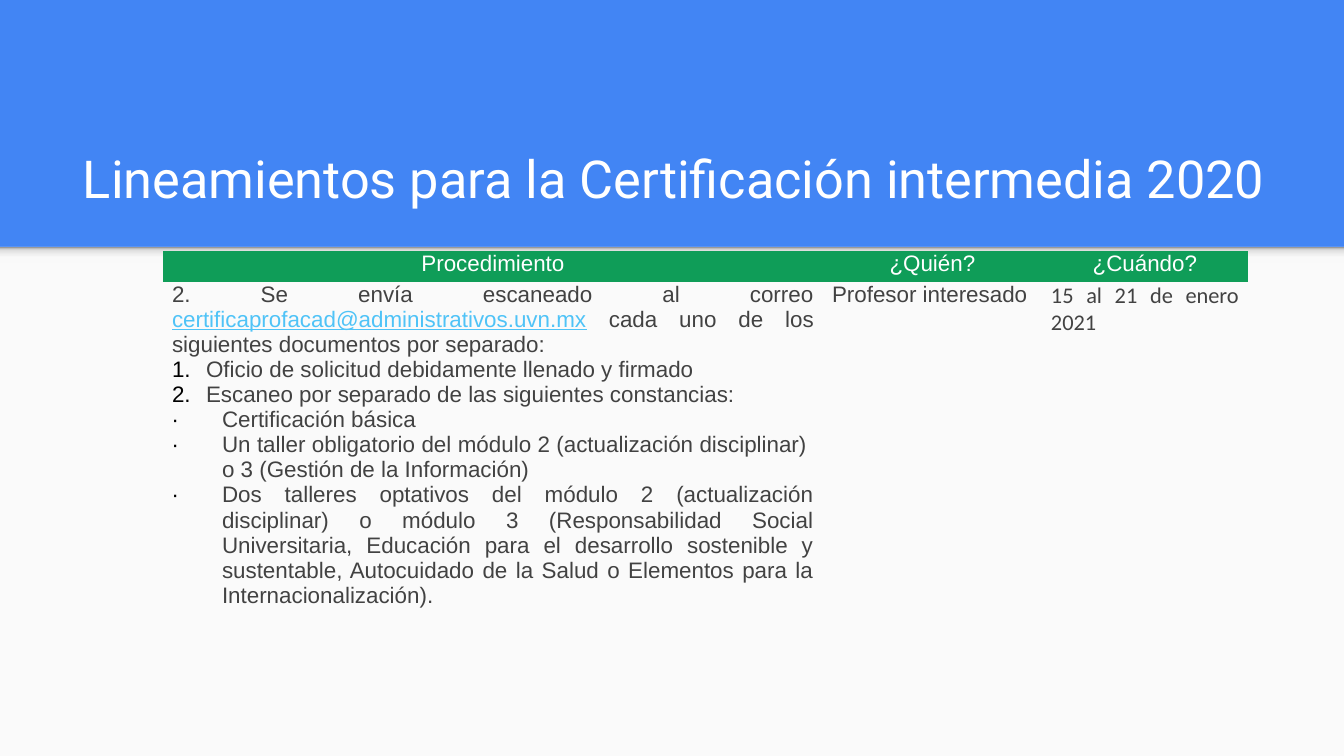
from copy import deepcopy

from lxml import etree
from pptx import Presentation
from pptx import util as u
from pptx.dml.color import RGBColor
from pptx.enum import shapes, text
from pptx.oxml import ns

EMU_PER_PX = 914400 / 134.4
NO_TABLE_STYLE = "{2D5ABB26-0587-4C30-8999-92F81FD0307C}"
COLORS = {
    "banner": "4285F4",
    "page": "FAFAFA",
    "header": "0F9D58",
    "white": "FFFFFF",
    "body": "424242",
    "link": "4FC3F7",
    "bullet": "000000",
}
SHADOW_STOPS = [(0, "F9F9F9"), (0.36, "F9F9F9"), (0.8, "DEDEDE"), (1, "999999")]
NUMBER = ("buAutoNum", "type", "arabicPeriod", 34)
DOT = ("buChar", "char", "∙", 50)

HEADERS = ["Procedimiento", "¿Quién?", "¿Cuándo?"]
EMAIL = "certificaprofacad@administrativos.uvn.mx"
STEPS = [
    (NUMBER, "Oficio de solicitud debidamente llenado y firmado"),
    (NUMBER, "Escaneo por separado de las siguientes constancias: "),
    (DOT, "Certificación básica"),
    (DOT, "Un taller obligatorio del módulo 2 (actualización disciplinar)  o 3 "
          "(Gestión de la Información) "),
    (DOT, "Dos talleres optativos del módulo 2 (actualización disciplinar) o módulo 3 "
          "(Responsabilidad Social Universitaria, Educación para el desarrollo sostenible "
          "y sustentable, Autocuidado de la Salud o Elementos para la Internacionalización)."),
]


def px(length):
    return u.Emu(round(length * EMU_PER_PX))


def rgb(name):
    return RGBColor.from_string(COLORS[name])


def add_run(paragraph, words, color="body", font="Arial", size=12, underline=False):
    run = paragraph.add_run()
    run.text = words
    run.font.name = font
    run.font.size = u.Pt(size)
    run.font.color.rgb = rgb(color)
    run.font.underline = underline


def add_bullet(paragraph, bullet):
    tag, attribute, value, indent = bullet
    properties = paragraph._p.get_or_add_pPr()
    properties.set("marL", str(px(indent)))
    properties.set("indent", str(-px(indent)))
    color = etree.SubElement(properties, ns.qn("a:buClr"))
    etree.SubElement(color, ns.qn("a:srgbClr"), val=COLORS["bullet"])
    etree.SubElement(properties, ns.qn("a:buFont"), typeface="Arial")
    etree.SubElement(properties, ns.qn(f"a:{tag}"), {attribute: value})


def add_rectangle(slide, left, top, width, height):
    rectangle = slide.shapes.add_shape(
        shapes.MSO_SHAPE.RECTANGLE, px(left), px(top), px(width), px(height))
    rectangle.shadow.inherit = False
    rectangle.line.fill.background()
    return rectangle


def add_page(slide, left, top, width, height):
    """Light page area with the banner's soft shadow along its top edge."""
    page = add_rectangle(slide, left, top, width, height)
    page.fill.solid()
    page.fill.fore_color.rgb = rgb("page")

    shadow = add_rectangle(slide, left, top, width, 16)
    shadow.fill.gradient()
    shadow.fill.gradient_angle = 90
    stop_list = shadow._element.spPr.find(".//" + ns.qn("a:gsLst"))
    while len(stop_list) < len(SHADOW_STOPS):
        stop_list.append(deepcopy(stop_list[0]))
    for stop, (position, color) in zip(shadow.fill.gradient_stops, SHADOW_STOPS):
        stop.position = position
        stop.color.rgb = RGBColor.from_string(color)


def add_title(slide, left, top, width, height):
    frame = slide.shapes.add_textbox(px(left), px(top), px(width), px(height)).text_frame
    frame.word_wrap = True
    frame.vertical_anchor = text.MSO_ANCHOR.BOTTOM
    frame.margin_left = frame.margin_right = px(13)
    frame.margin_top = frame.margin_bottom = px(13)
    add_run(frame.paragraphs[0], "Lineamientos para la Certificación intermedia 2020",
            "white", "Roboto", 28)


def fill_procedure(frame):
    intro = frame.paragraphs[0]
    add_run(intro, "2. Se envía escaneado al correo ")
    add_run(intro, EMAIL, "link", underline=True)
    add_run(intro, " ", "banner")
    add_run(intro, "cada uno de los siguientes documentos por separado:")
    for bullet, words in STEPS:
        paragraph = frame.add_paragraph()
        add_bullet(paragraph, bullet)
        add_run(paragraph, words)


def add_procedure_table(slide, left, top, column_widths, row_heights):
    graphic = slide.shapes.add_table(
        len(row_heights), len(column_widths), px(left), px(top),
        px(sum(column_widths)), px(sum(row_heights)))
    table = graphic.table
    table.first_row = table.horz_banding = False
    table._tbl.tblPr.find(ns.qn("a:tableStyleId")).text = NO_TABLE_STYLE
    for column, width in zip(table.columns, column_widths):
        column.width = px(width)
    for row, height in zip(table.rows, row_heights):
        row.height = px(height)
    for cell in table.iter_cells():
        cell.margin_left = cell.margin_right = px(9)
        cell.margin_top = cell.margin_bottom = 0
        cell.fill.background()

    for index, words in enumerate(HEADERS):
        cell = table.cell(0, index)
        cell.fill.solid()
        cell.fill.fore_color.rgb = rgb("header")
        paragraph = cell.text_frame.paragraphs[0]
        paragraph.alignment = text.PP_ALIGN.CENTER
        add_run(paragraph, words, "white")

    procedure, who, when = (table.cell(1, index).text_frame for index in range(3))
    fill_procedure(procedure)
    add_run(who.paragraphs[0], "Profesor interesado")
    add_run(when.paragraphs[0], "15 al 21 de enero 2021", font="Calibri")
    for frame in (procedure, who, when):
        for paragraph in frame.paragraphs:
            paragraph.alignment = text.PP_ALIGN.JUSTIFY


def main():
    presentation = Presentation()
    presentation.slide_width, presentation.slide_height = px(1344), px(756)
    slide = presentation.slides.add_slide(presentation.slide_layouts[6])
    slide.background.fill.solid()
    slide.background.fill.fore_color.rgb = rgb("banner")
    add_page(slide, 0, 247, 1344, 509)
    add_title(slide, 70, 109, 1208, 113)
    add_procedure_table(slide, 163, 251, [660, 219, 206], [31, 442])
    presentation.save("out.pptx")


if __name__ == "__main__":
    main()
